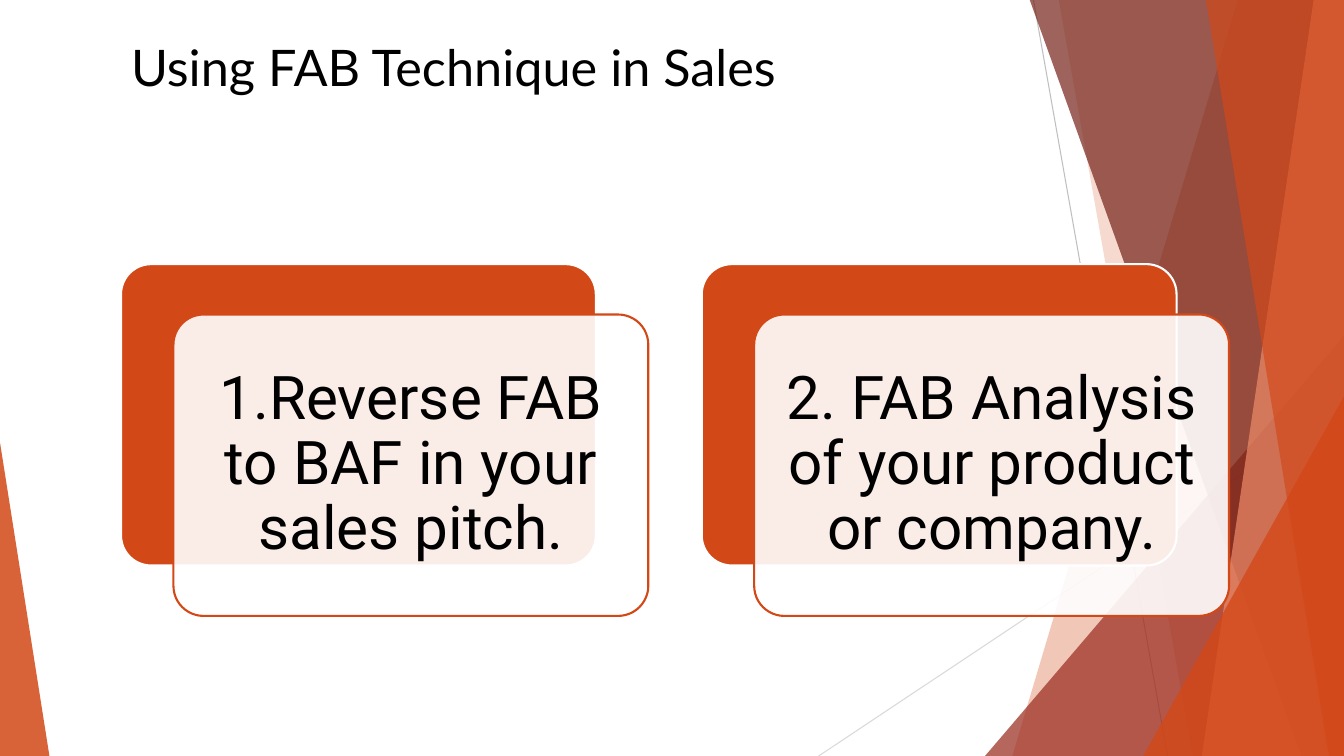
from pptx import Presentation
from pptx.dml.color import RGBColor
from pptx.enum.shapes import MSO_CONNECTOR, MSO_SHAPE
from pptx.enum.text import MSO_ANCHOR, PP_ALIGN
from pptx.oxml.ns import qn
from pptx.util import Inches, Pt
from lxml.etree import SubElement

# Colours
ORANGE = RGBColor(0xD3, 0x48, 0x17)
RED = RGBColor(0x9B, 0x2D, 0x1F)
MAROON = RGBColor(0x74, 0x22, 0x17)
SALMON = RGBColor(0xEF, 0x8C, 0x6A)
GREY = RGBColor(0xBF, 0xBF, 0xBF)
LIGHT_GREY = RGBColor(0xD9, 0xD9, 0xD9)
WHITE = RGBColor(0xFF, 0xFF, 0xFF)
BLACK = RGBColor(0, 0, 0)

# Content
TITLE = "Using FAB Technique\u00a0in Sales"
CARDS = ["1.Reverse FAB to BAF in your sales pitch.",
         "2. FAB Analysis of your product or company."]

# Backdrop, from back to front
WIDTH, HEIGHT = 13.33, 7.5
BAND_TOP = -0.01
RAYS = [((10.25, 0), (11.58, HEIGHT), GREY),
        ((WIDTH, 4.03), (8.12, HEIGHT), LIGHT_GREY)]
# band: top left x, bottom left x, colour, opacity
# triangle: left, top, width, apex position, colour, opacity
BACKDROP = [("band", 12.28, 10.04, ORANGE, 30),
            ("band", 10.5, 11.83, ORANGE, 20),
            ("triangle", 9.77, 3.33, 3.56, 1, RED, 72),
            ("band", 10.21, 12.91, MAROON, 70),
            ("band", 13.03, 11.92, SALMON, 70),
            ("band", 11.96, 13.18, ORANGE, 65),
            ("triangle", 11.34, 3.93, 1.99, 1, ORANGE, 80),
            ("triangle", 0, 4.39, 0.49, 0, ORANGE, 85)]

# Card geometry
CARD_LEFT, CARD_TOP, CARD_PITCH = 1.2, 2.62, 5.76
CARD_WIDTH, CARD_HEIGHT = 4.71, 2.99
FRONT_SHIFT_X, FRONT_SHIFT_Y = 0.52, 0.5
TEXT_INSET, TEXT_MARGIN = 0.09, 0.18


def paint(shape, color, opacity=100, line=None):
    shape.shadow.inherit = False
    shape.fill.solid()
    shape.fill.fore_color.rgb = color
    if opacity < 100:
        color_element = shape._element.spPr.find(qn("a:solidFill"))[0]
        SubElement(color_element, qn("a:alpha"), val=str(opacity * 1000))
    if line is None:
        shape.line.fill.background()
    else:
        shape.line.color.rgb = line
        shape.line.width = Pt(1.5)


def add_ray(shapes, start, end, color):
    ray = shapes.add_connector(MSO_CONNECTOR.STRAIGHT,
                               *(Inches(value) for value in start + end))
    ray.line.color.rgb = color
    ray.line.width = Pt(0.75)
    SubElement(ray._element.spPr, qn("a:effectLst"))


def add_band(shapes, top_x, bottom_x, color, opacity):
    builder = shapes.build_freeform(Inches(top_x), Inches(BAND_TOP))
    corners = [(WIDTH, BAND_TOP), (WIDTH, HEIGHT), (bottom_x, HEIGHT)]
    builder.add_line_segments([(Inches(x), Inches(y)) for x, y in corners], close=True)
    paint(builder.convert_to_shape(), color, opacity)


def add_triangle(shapes, left, top, width, apex, color, opacity):
    triangle = shapes.add_shape(MSO_SHAPE.ISOSCELES_TRIANGLE, Inches(left), Inches(top),
                                Inches(width), Inches(HEIGHT - top))
    triangle.adjustments[0] = apex
    paint(triangle, color, opacity)


def add_panel(shapes, left, top, color, opacity, line):
    panel = shapes.add_shape(MSO_SHAPE.ROUNDED_RECTANGLE, Inches(left), Inches(top),
                             Inches(CARD_WIDTH), Inches(CARD_HEIGHT))
    panel.adjustments[0] = 0.1
    paint(panel, color, opacity, line)


def add_run(paragraph, text, font, size):
    run = paragraph.add_run()
    run.text = text
    run.font.name = font
    run.font.size = Pt(size)
    run.font.color.rgb = BLACK


def add_card(shapes, left, text):
    front_left, front_top = left + FRONT_SHIFT_X, CARD_TOP + FRONT_SHIFT_Y
    add_panel(shapes, left, CARD_TOP, ORANGE, 100, WHITE)
    add_panel(shapes, front_left, front_top, WHITE, 90, ORANGE)
    box = shapes.add_textbox(Inches(front_left + TEXT_INSET), Inches(front_top + TEXT_INSET),
                             Inches(CARD_WIDTH - 2 * TEXT_INSET),
                             Inches(CARD_HEIGHT - 2 * TEXT_INSET))
    frame = box.text_frame
    frame.word_wrap = True
    frame.vertical_anchor = MSO_ANCHOR.MIDDLE
    frame.margin_left = frame.margin_right = Inches(TEXT_MARGIN)
    frame.margin_top = frame.margin_bottom = Inches(TEXT_MARGIN)
    paragraph = frame.paragraphs[0]
    paragraph.alignment = PP_ALIGN.CENTER
    paragraph.line_spacing = 0.9
    add_run(paragraph, text, "Roboto", 43)


def main():
    presentation = Presentation()
    presentation.slide_width = Inches(WIDTH)
    presentation.slide_height = Inches(HEIGHT)
    slide = presentation.slides.add_slide(presentation.slide_layouts[5])
    shapes = slide.shapes
    title = shapes.title

    # Backdrop
    for start, end, color in RAYS:
        add_ray(shapes, start, end, color)
    adders = {"band": add_band, "triangle": add_triangle}
    for kind, *values in BACKDROP:
        adders[kind](shapes, *values)

    # Title, in front of the backdrop
    shapes._spTree.append(title._element)
    title.left, title.top = Inches(1.2), Inches(0.31)
    title.width, title.height = Inches(11), Inches(1.59)
    title.text_frame.word_wrap = True
    title.text_frame.vertical_anchor = MSO_ANCHOR.TOP
    paragraph = title.text_frame.paragraphs[0]
    paragraph.alignment = PP_ALIGN.LEFT
    add_run(paragraph, TITLE, "Lato", 36)

    # Cards
    for index, text in enumerate(CARDS):
        add_card(shapes, CARD_LEFT + index * CARD_PITCH, text)

    presentation.save("out.pptx")


if __name__ == "__main__":
    main()
